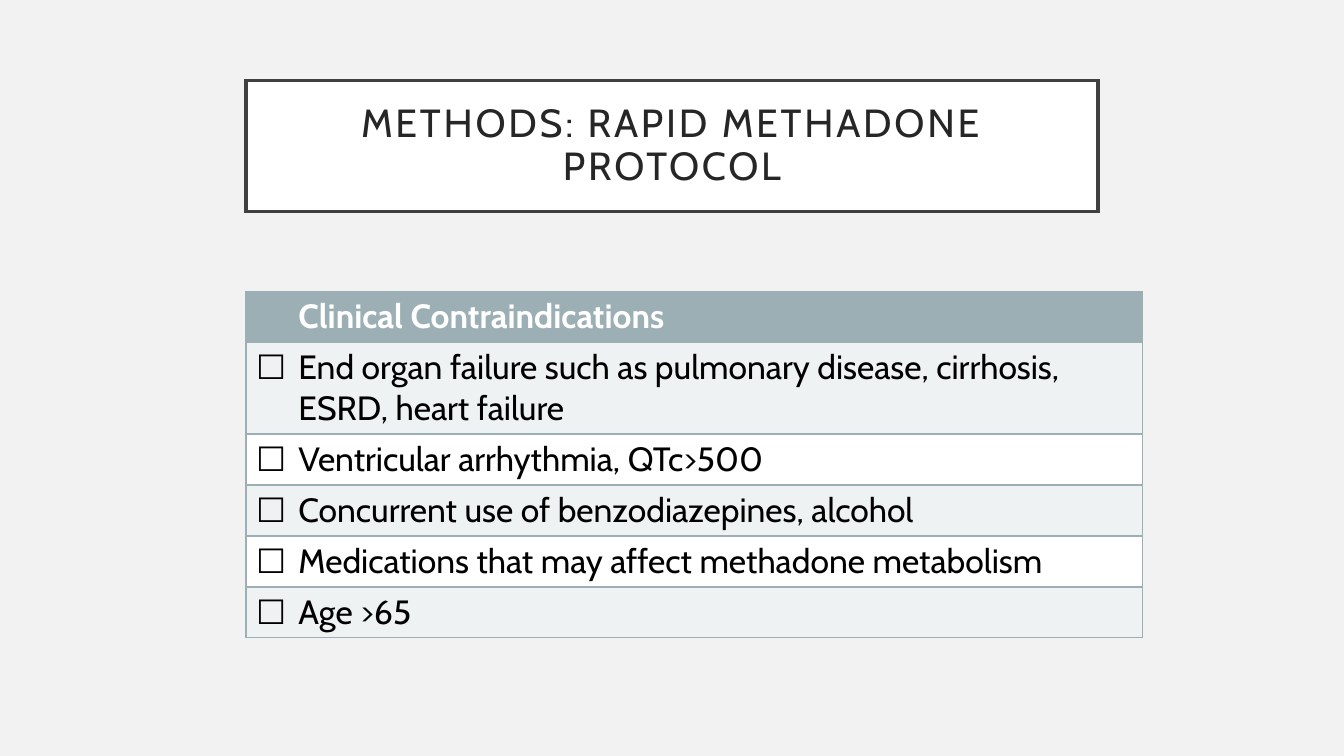
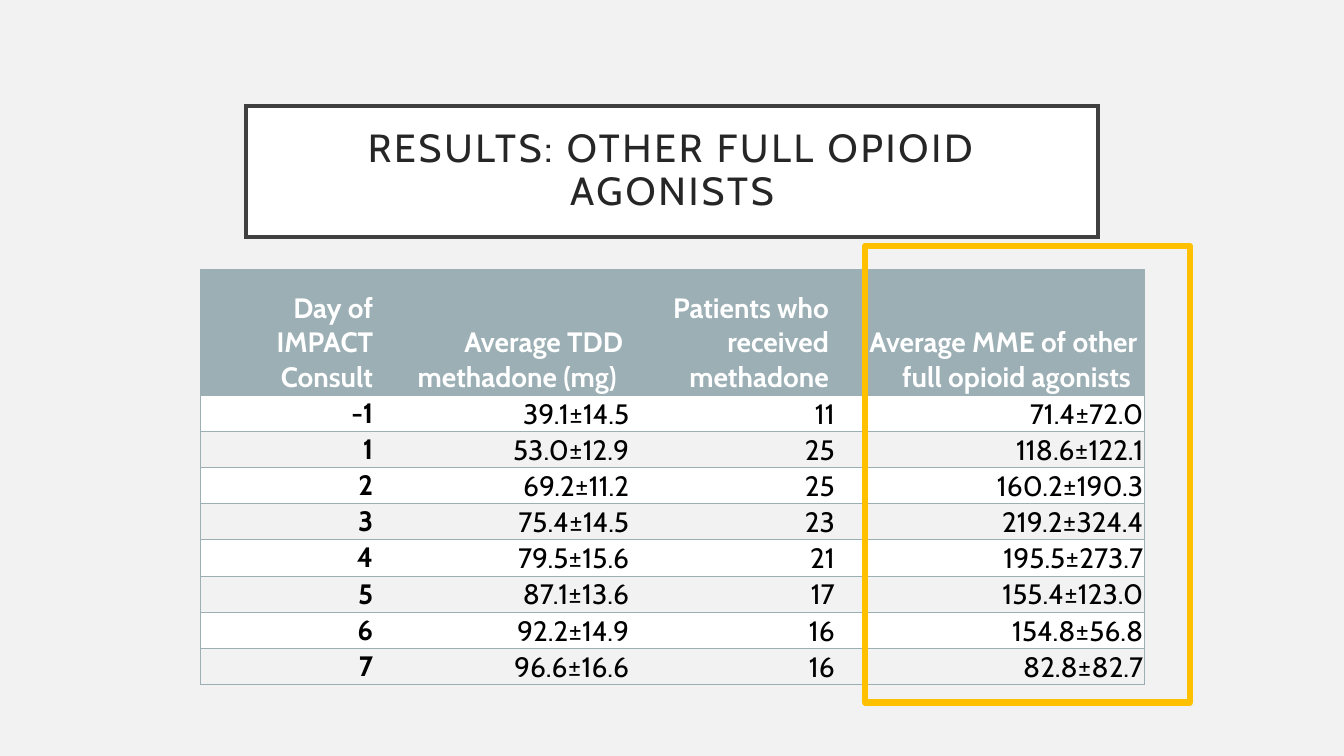
from lxml.etree import SubElement
from pptx import Presentation
from pptx.dml.color import RGBColor
from pptx.enum.shapes import MSO_SHAPE
from pptx.enum.text import MSO_ANCHOR as ANCHOR, MSO_AUTO_SIZE, PP_ALIGN as ALIGN
from pptx.oxml.ns import qn
from pptx.util import Inches, Pt

FONT = "Cabin"
BACKGROUND = RGBColor(0xF2, 0xF2, 0xF2)
WHITE = RGBColor(0xFF, 0xFF, 0xFF)
BLACK = RGBColor(0x00, 0x00, 0x00)
TITLE_TEXT = RGBColor(0x26, 0x26, 0x26)
TITLE_FRAME = RGBColor(0x40, 0x40, 0x40)
TEAL = RGBColor(0x9B, 0xAF, 0xB5)
PALE_TEAL = RGBColor(0xEF, 0xF2, 0xF3)
GOLD = RGBColor(0xFF, 0xC0, 0x00)

CONTRAINDICATIONS = [
    "End organ failure such as pulmonary disease, cirrhosis, ESRD, heart failure",
    "Ventricular arrhythmia, QTc>500",
    "Concurrent use of benzodiazepines, alcohol",
    "Medications that may affect methadone metabolism",
    "Age >65",
]
AGONIST_ROWS = [
    ("Day of IMPACT Consult", "Average TDD methadone (mg) ",
     "Patients who received methadone", "Average MME of other full opioid agonists "),
    ("-1", "39.1±14.5", "11", "71.4±72.0"),
    ("1", "53.0±12.9", "25", "118.6±122.1"),
    ("2", "69.2±11.2", "25", "160.2±190.3"),
    ("3", "75.4±14.5", "23", "219.2±324.4"),
    ("4", "79.5±15.6", "21", "195.5±273.7"),
    ("5", "87.1±13.6", "17", "155.4±123.0"),
    ("6", "92.2±14.9", "16", "154.8±56.8"),
    ("7", "96.6±16.6", "16", "82.8±82.7"),
]


def write_text(frame, text, size, color=BLACK, bold=False, align=ALIGN.LEFT,
               line_spacing=None, tracking=None):
    paragraph = frame.paragraphs[0]
    paragraph.alignment = align
    paragraph.line_spacing = line_spacing
    run = paragraph.add_run()
    run.text = text
    font = run.font
    font.name, font.size, font.bold = FONT, Pt(size), bold
    font.color.rgb = color
    if tracking:
        run._r.get_or_add_rPr().set("spc", str(tracking * 100))


def set_margins(target, left, top, right, bottom):
    target.margin_left, target.margin_top = Inches(left), Inches(top)
    target.margin_right, target.margin_bottom = Inches(right), Inches(bottom)


def set_outline(shape, color, width, join):
    shape.line.color.rgb = color
    shape.line.width = Pt(width)
    SubElement(shape.line._get_or_add_ln(), qn(f"a:{join}"))


def set_borders(cell, sides, width):
    """Rule the named sides in teal and clear the others."""
    properties = cell._tc.get_or_add_tcPr()
    for side in "LRTB":
        line = SubElement(properties, qn(f"a:ln{side}"), w=str(Pt(width)))
        if side in sides:
            fill = SubElement(line, qn("a:solidFill"))
            SubElement(fill, qn("a:srgbClr"), val=str(TEAL))
        else:
            SubElement(line, qn("a:noFill"))


def add_titled_slide(presentation, title, top):
    slide = presentation.slides.add_slide(presentation.slide_layouts[5])
    shape = slide.shapes.title
    shape.left, shape.top = Inches(2.44), Inches(top)
    shape.width, shape.height = Inches(8.45), Inches(1.3)
    shape.fill.solid()
    shape.fill.fore_color.rgb = WHITE
    set_outline(shape, TITLE_FRAME, 2.5, "miter")
    frame = shape.text_frame
    frame.word_wrap = True
    frame.auto_size = MSO_AUTO_SIZE.NONE
    frame.vertical_anchor = ANCHOR.MIDDLE
    set_margins(frame, 0.2, 0.2, 0.2, 0.2)
    write_text(frame, title, 28, color=TITLE_TEXT, align=ALIGN.CENTER,
               line_spacing=0.9, tracking=2)
    return slide


def add_ruled_table(slide, rows, left, top, widths, heights, bands, border, style_cell):
    """Add a table with a teal header; bands holds the fills of the body rows in turn."""
    table = slide.shapes.add_table(len(rows), len(widths), Inches(left), Inches(top),
                                   Inches(sum(widths)), Inches(sum(heights))).table
    table.horz_banding = False
    for column, width in zip(table.columns, widths):
        column.width = Inches(width)
    for row, height in zip(table.rows, heights):
        row.height = Inches(height)
    last = len(widths) - 1
    for i, texts in enumerate(rows):
        for j, text in enumerate(texts):
            cell = table.cell(i, j)
            sides = "TB" + "L" * (j == 0) + "R" * (j == last)
            set_borders(cell, sides, border)
            cell.fill.solid()
            cell.fill.fore_color.rgb = bands[(i - 1) % len(bands)] if i else TEAL
            style_cell(cell, text, i == 0, j == 0)


def style_checklist_cell(cell, text, is_header, is_first):
    write_text(cell.text_frame, text, 24, color=WHITE if is_header else BLACK,
               bold=is_header)


def style_result_cell(cell, text, is_header, is_first):
    is_label = is_header or is_first
    cell.vertical_anchor = ANCHOR.BOTTOM
    set_margins(cell, *((0.07, 0.01, 0.07, 0.01) if is_label else (0.01, 0.01, 0.01, 0)))
    write_text(cell.text_frame, text, 20, color=WHITE if is_header else BLACK,
               bold=is_label, align=ALIGN.RIGHT)


def add_highlight(slide, left, top, width, height):
    box = slide.shapes.add_shape(MSO_SHAPE.RECTANGLE, Inches(left), Inches(top),
                                 Inches(width), Inches(height))
    box.shadow.inherit = False
    box.fill.background()
    set_outline(box, GOLD, 4.5, "round")


def add_protocol_slide(presentation):
    slide = add_titled_slide(presentation, "METHODS: RAPID METHADONE PROTOCOL", 0.8)
    rows = [("", "Clinical Contraindications")]
    rows += [("☐", item) for item in CONTRAINDICATIONS]
    add_ruled_table(slide, rows, 2.44, 2.89, [0.42, 8.47], [0.41] * len(rows),
                    [PALE_TEAL, WHITE], 1, style_checklist_cell)


def add_agonists_slide(presentation):
    slide = add_titled_slide(presentation, "RESULTS: OTHER FULL OPIOID AGONISTS", 1.05)
    heights = [1.25] + [0.34] * (len(AGONIST_ROWS) - 1)
    add_ruled_table(slide, AGONIST_ROWS, 1.99, 2.67, [1.78, 2.48, 2.04, 3.06], heights,
                    [WHITE, BACKGROUND], 0.5, style_result_cell)
    add_highlight(slide, 8.58, 2.44, 3.22, 4.53)


def main():
    presentation = Presentation()
    presentation.slide_width, presentation.slide_height = Inches(13.33), Inches(7.5)
    backdrop = presentation.slide_master.background.fill
    backdrop.solid()
    backdrop.fore_color.rgb = BACKGROUND
    add_protocol_slide(presentation)
    add_agonists_slide(presentation)
    presentation.save("out.pptx")


if __name__ == "__main__":
    main()
